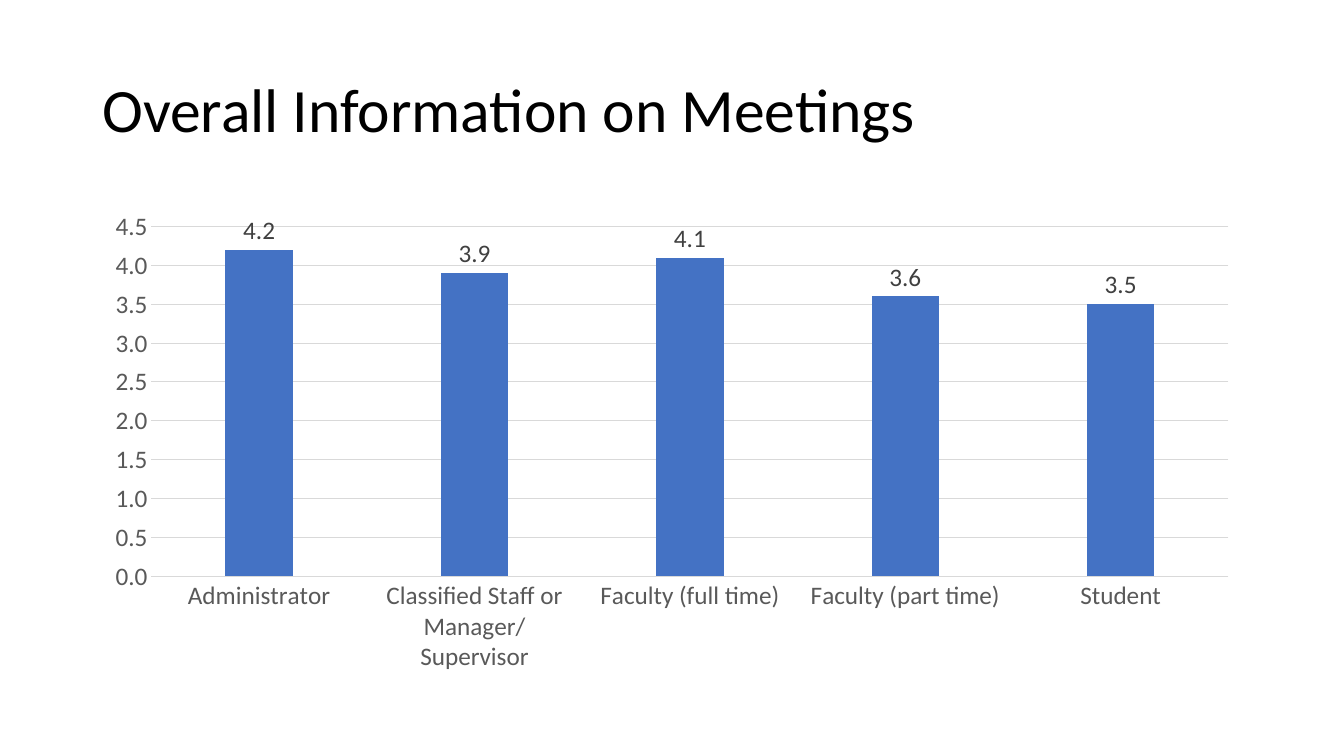
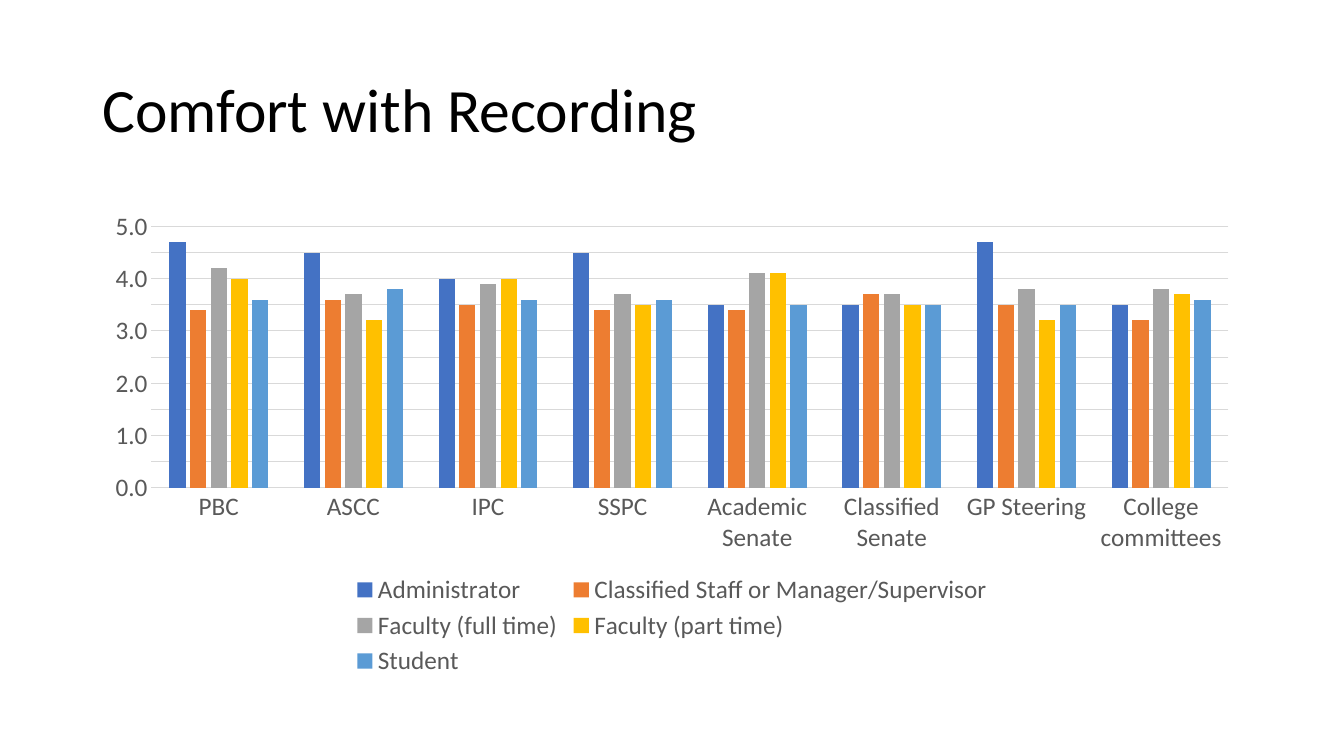
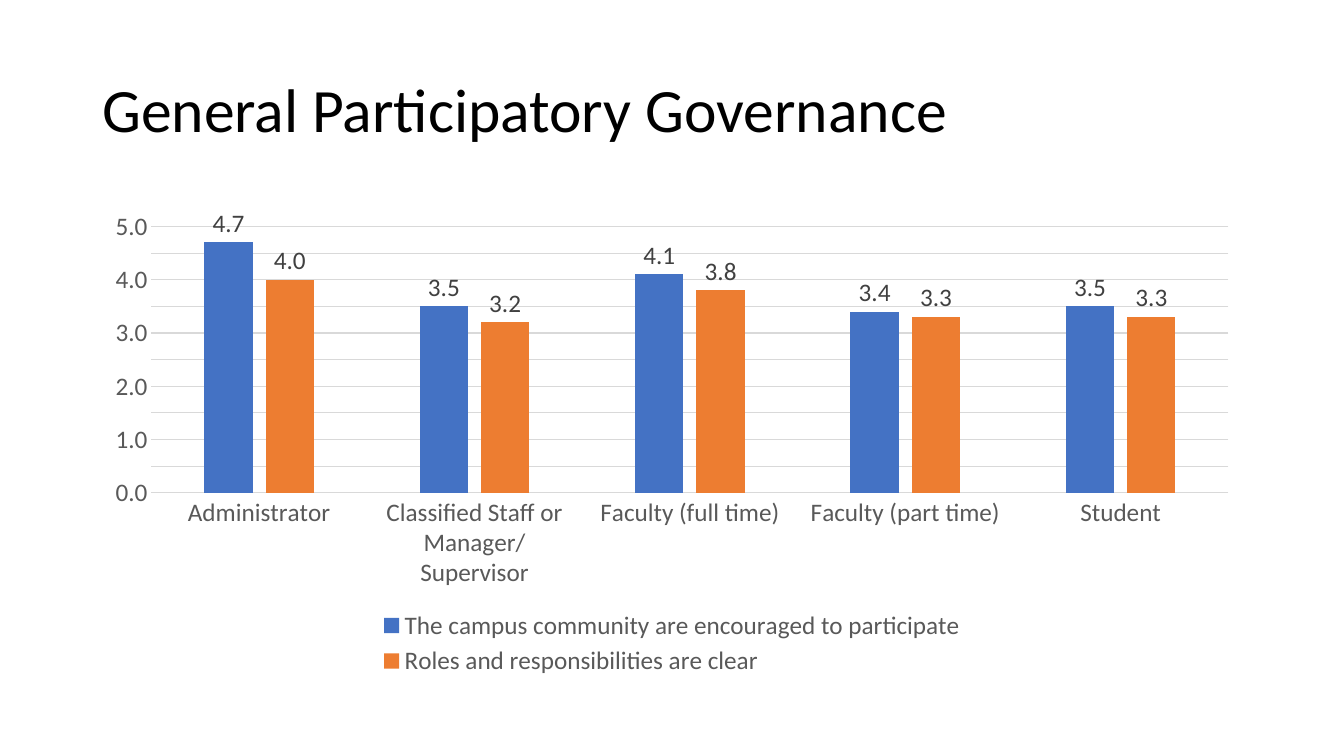
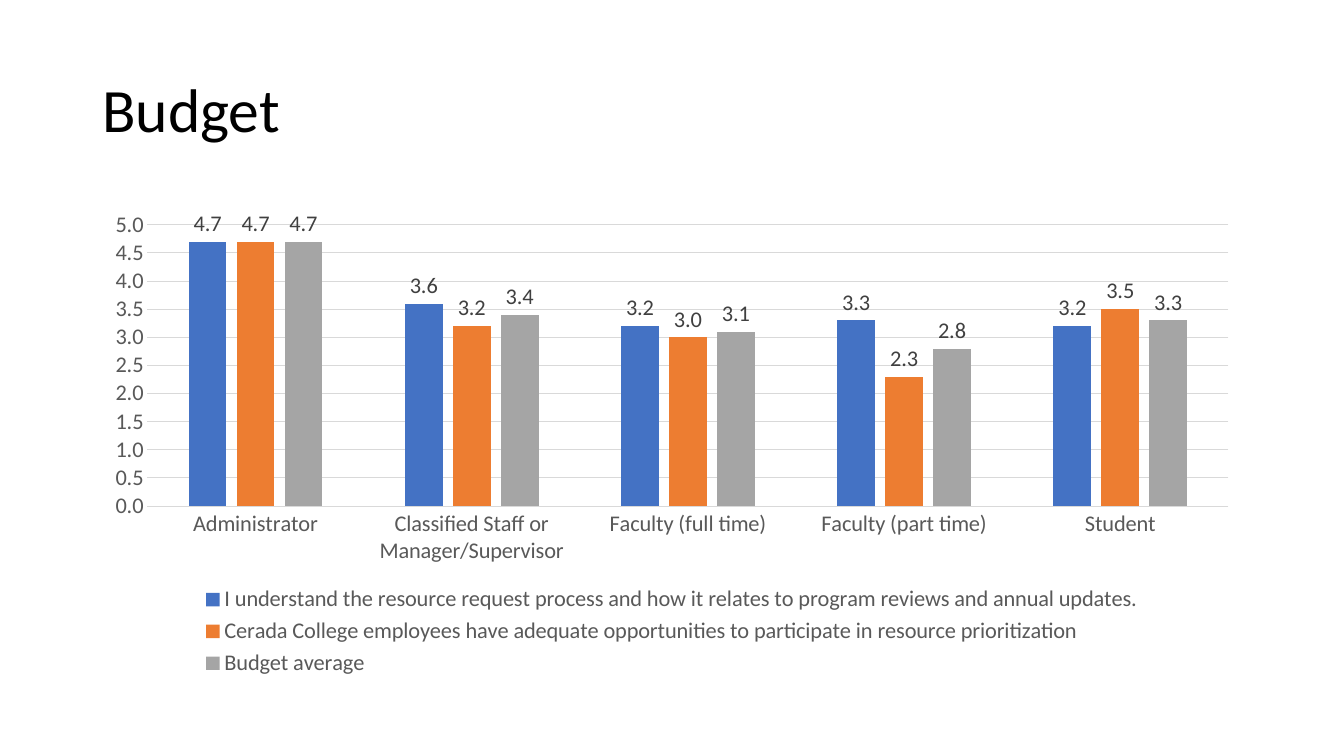
"""Build four slides of survey results, each a title above a column chart."""
from pptx import Presentation
from pptx import util as u
from pptx.chart.data import CategoryChartData
from pptx.dml.color import RGBColor
from pptx.enum import chart as ch, text

PX = 9525
FONT = "Calibri"
INK, AXIS_INK, LABEL_INK, GRID = "000000", "595959", "404040", "D9D9D9"
SERIES_COLORS = ["4472C4", "ED7D31", "A5A5A5", "FFC000", "5B9BD5"]
TITLE_BOX = (88, 38, 1104, 139)
CHART_BOX = (88, 192, 1104, 457)

ROLES = ["Administrator", "Classified Staff or Manager/Supervisor",
         "Faculty (full time)", "Faculty (part time)", "Student"]
COMMITTEES = ["PBC", "ASCC", "IPC", "SSPC", "Academic Senate",
              "Classified Senate", "GP Steering", "College committees"]
COMFORT = [
    [4.7, 4.5, 4, 4.5, 3.5, 3.5, 4.7, 3.5],
    [3.4, 3.6, 3.5, 3.4, 3.4, 3.7, 3.5, 3.2],
    [4.2, 3.7, 3.9, 3.7, 4.1, 3.7, 3.8, 3.8],
    [4, 3.2, 4, 3.5, 4.1, 3.5, 3.2, 3.7],
    [3.6, 3.8, 3.6, 3.6, 3.5, 3.5, 3.5, 3.6],
]

SLIDES = [
    dict(title="Overall Information on Meetings", categories=ROLES, top=4.5, legend=False,
         series={"Series 1": [4.2, 3.9, 4.1, 3.6, 3.5]}),
    dict(title="Comfort with Recording", categories=COMMITTEES, labels=False,
         series=dict(zip(ROLES, COMFORT))),
    dict(title="General Participatory Governance", categories=ROLES, series={
        "The campus community are encouraged to participate": [4.7, 3.5, 4.1, 3.4, 3.5],
        "Roles and responsibilities are clear": [4, 3.2, 3.8, 3.3, 3.3],
    }),
    dict(title="Budget", categories=ROLES, size=16, series={
        "I understand the resource request process and how it relates to "
        "program reviews and annual updates.": [4.7, 3.6, 3.2, 3.3, 3.2],
        "Cerada College employees have adequate opportunities to "
        "participate in resource prioritization": [4.7, 3.2, 3, 2.3, 3.5],
        "Budget average": [4.7, 3.4, 3.1, 2.8, 3.3],
    }),
]


def color(hex_code):
    return RGBColor.from_string(hex_code)


def px(box):
    return [length * PX for length in box]


def style_font(font, size, ink):
    font.name, font.size = FONT, u.Pt(size)
    font.color.rgb = color(ink)


def style_line(line):
    line.color.rgb = color(GRID)
    line.width = u.Pt(0.75)


def add_title(slide, title):
    frame = slide.shapes.add_textbox(*px(TITLE_BOX)).text_frame
    frame.word_wrap = True
    frame.vertical_anchor = text.MSO_ANCHOR.MIDDLE
    frame.text = title
    heading = frame.paragraphs[0]
    heading.line_spacing = 0.9
    style_font(heading.runs[0].font, 44, INK)


def style_axes(chart, size, top):
    roles, scores = chart.category_axis, chart.value_axis
    for axis in (roles, scores):
        axis.major_tick_mark = axis.minor_tick_mark = ch.XL_TICK_MARK.NONE
        style_font(axis.tick_labels.font, size, AXIS_INK)
    style_line(roles.format.line)
    scores.format.line.fill.background()
    style_line(scores.major_gridlines.format.line)
    scores.minimum_scale, scores.maximum_scale, scores.major_unit = 0, top, 0.5
    scores.tick_labels.number_format = "0.0"
    scores.tick_labels.number_format_is_linked = False


def add_scores(slide, categories, series, size=18, top=5, legend=True, labels=True):
    scores = CategoryChartData(number_format="0.0")
    scores.categories = categories
    for name, values in series.items():
        scores.add_series(name, values)
    chart = slide.shapes.add_chart(
        ch.XL_CHART_TYPE.COLUMN_CLUSTERED, *px(CHART_BOX), scores).chart
    style_font(chart.font, size, INK)
    chart.has_title = False
    style_axes(chart, size, top)
    chart.has_legend = legend
    if legend:
        chart.legend.position = ch.XL_LEGEND_POSITION.BOTTOM
        chart.legend.include_in_layout = False
        style_font(chart.legend.font, size, AXIS_INK)
    plot = chart.plots[0]
    plot.gap_width, plot.overlap, plot.vary_by_categories = 219, -27, False
    for columns, fill in zip(plot.series, SERIES_COLORS):
        columns.format.fill.solid()
        columns.format.fill.fore_color.rgb = color(fill)
        if labels:
            marks = columns.data_labels
            marks.show_value = True
            marks.position = ch.XL_LABEL_POSITION.OUTSIDE_END
            marks.number_format, marks.number_format_is_linked = "0.0", False
            style_font(marks.font, size, LABEL_INK)


def main():
    deck = Presentation()
    deck.slide_width, deck.slide_height = px((1280, 720))
    for content in SLIDES:
        slide = deck.slides.add_slide(deck.slide_layouts[6])
        options = dict(content)
        add_title(slide, options.pop("title"))
        add_scores(slide, **options)
    deck.save("out.pptx")


if __name__ == "__main__":
    main()
